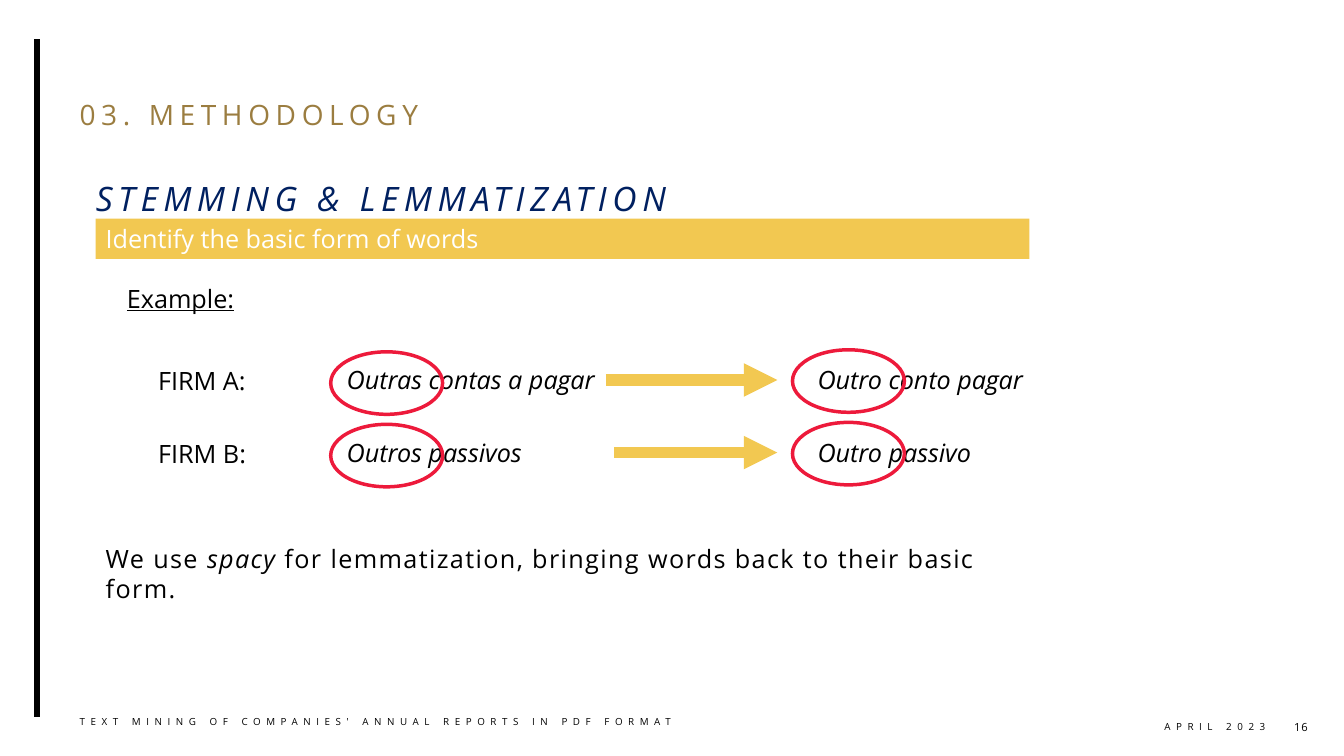
from lxml.etree import SubElement
from pptx import Presentation
from pptx.dml.color import RGBColor
from pptx.enum.shapes import MSO_CONNECTOR as Connector, MSO_SHAPE as Shape
from pptx.enum.text import MSO_ANCHOR as Anchor, MSO_AUTO_SIZE as AutoSize, PP_ALIGN as Align
from pptx.oxml.ns import qn
from pptx.util import Inches, Pt

BLACK = RGBColor(0x00, 0x00, 0x00)
WHITE = RGBColor(0xFF, 0xFF, 0xFF)
NAVY = RGBColor(0x00, 0x20, 0x60)
BRONZE = RGBColor(0x9B, 0x7D, 0x40)
YELLOW = RGBColor(0xF2, 0xC8, 0x51)
RED = RGBColor(0xED, 0x1A, 0x3B)

FONT = "Open Sans"
WIDTH, HEIGHT = Inches(13.33), Inches(7.5)
COLUMN, ROW = WIDTH / 133.3, HEIGHT / 75
LINE_ROWS = 4
ROW_PITCH = 7.2
FIRMS = [
    ("FIRM A:", "Outras contas a pagar", "Outro conto pagar", 45.4),
    ("FIRM B:", "Outros passivos", "Outro passivo", 46.2),
]


def place(left, top, width, height):
    return (round(left * COLUMN), round(top * ROW),
            round(width * COLUMN), round(height * ROW))


def write(shape, runs, *, size=18, color=BLACK, italic=False, underline=False,
          tracking=0, align=Align.LEFT, anchor=Anchor.TOP, insets=(0.1, 0.05),
          line_spacing=None):
    frame = shape.text_frame
    frame.word_wrap = True
    frame.auto_size = AutoSize.NONE
    frame.vertical_anchor = anchor
    frame.margin_left = frame.margin_right = Inches(insets[0])
    frame.margin_top = frame.margin_bottom = Inches(insets[1])
    paragraph = frame.paragraphs[0]
    paragraph.alignment = align
    if line_spacing:
        paragraph.line_spacing = line_spacing
    for text, slanted in [(runs, italic)] if isinstance(runs, str) else runs:
        run = paragraph.add_run()
        run.text = text
        font = run.font
        font.name, font.size, font.color.rgb = FONT, Pt(size), color
        font.italic, font.underline = slanted, underline
        if tracking:
            font._element.set("spc", str(round(tracking * 100)))


def add_text(slide, box, runs, **style):
    write(slide.shapes.add_textbox(*place(*box)), runs, **style)


def add_line(slide, start, end, color, weight, arrow=False):
    ends = place(*start, *end)
    connector = slide.shapes.add_connector(Connector.STRAIGHT, *ends)
    connector.line.color.rgb = color
    connector.line.width = Pt(weight)
    if arrow:
        SubElement(connector.line._get_or_add_ln(), qn("a:tailEnd"), type="triangle")
    SubElement(connector._element.spPr, qn("a:effectLst"))


def add_circle(slide, left, top):
    circle = slide.shapes.add_shape(Shape.OVAL, *place(left, top, 11.1, 6.2))
    circle.shadow.inherit = False
    circle.fill.background()
    circle.line.color.rgb = RED
    circle.line.width = Pt(2.5)


def add_header(slide, box):
    left, top, width, height = box
    heading = dict(tracking=4, insets=(0, 0.2), line_spacing=0.9)
    add_text(slide, (left, top, width, height), "03. METHODOLOGY",
             size=20, color=BRONZE, **heading)
    title = slide.shapes.title
    title.left, title.top, title.width, title.height = place(
        left + 1.6, top + 8.1, width, height)
    write(title, "STEMMING & LEMMATIZATION", size=24, color=NAVY, italic=True, **heading)


def add_banner(slide, box):
    banner = slide.shapes.add_shape(Shape.RECTANGLE, *place(*box))
    banner.shadow.inherit = False
    banner.fill.solid()
    banner.fill.fore_color.rgb = YELLOW
    banner.line.fill.background()
    write(banner, "Identify the basic form of words", color=WHITE, align=Align.JUSTIFY)


def add_firm_row(slide, box, label, source, lemma, arrow_start):
    left, top, width, height = box
    text_top = top + 0.95
    add_text(slide, (left, text_top + 0.1, 16.7, height), label)
    add_text(slide, (left + 18.7, text_top, 31.5, height), source, italic=True)
    add_text(slide, (left + 65.4, text_top, width - 65.4, height), lemma, italic=True)
    add_line(slide, (left + arrow_start, top + 3),
             (left + 62.4, top + 3), YELLOW, 8, arrow=True)
    add_circle(slide, left + 18.1, top + 0.2)
    add_circle(slide, left + 63.9, top)


def add_example(slide, box):
    left, top, width, height = box
    add_text(slide, (left, top, 44.3, LINE_ROWS), "Example:", underline=True)
    for index, firm in enumerate(FIRMS):
        row_top = top + 7.1 + index * ROW_PITCH
        add_firm_row(slide, (left + 3.1, row_top, width - 3.1, LINE_ROWS), *firm)
    closing = [("We use ", False), ("spacy", True),
               (" for lemmatization, bringing words back to their basic form.", False)]
    add_text(slide, (left - 2.1, top + height - 7.1, width, 7.1), closing, tracking=1)


def add_footer(slide, box):
    left, top, width, height = box
    small = dict(anchor=Anchor.MIDDLE, insets=(0, 0))
    add_text(slide, (left, top - 0.5, 74.8, height),
             "TEXT MINING OF COMPANIES' ANNUAL REPORTS IN PDF FORMAT",
             size=7, tracking=4, **small)
    add_text(slide, (left + width - 19.9, top, 15.7, height), "APRIL 2023",
             size=7, tracking=4, align=Align.RIGHT, **small)
    add_text(slide, (left + width - 3.8, top, 3.8, height), "16",
             size=8, tracking=0.5, align=Align.RIGHT, **small)


def main():
    presentation = Presentation()
    presentation.slide_width, presentation.slide_height = WIDTH, HEIGHT
    slide = presentation.slides.add_slide(presentation.slide_layouts[5])
    add_line(slide, (3.7, 3.9), (3.7, 71.1), BLACK, 4)
    add_header(slide, (7.9, 8, 113.7, 9.8))
    add_banner(slide, (9.5, 21.7, 92.6, LINE_ROWS))
    add_example(slide, (11.6, 27.6, 93.4, 32.9))
    add_footer(slide, (7.9, 71.1, 121.8, 2))
    presentation.save("out.pptx")


if __name__ == "__main__":
    main()
